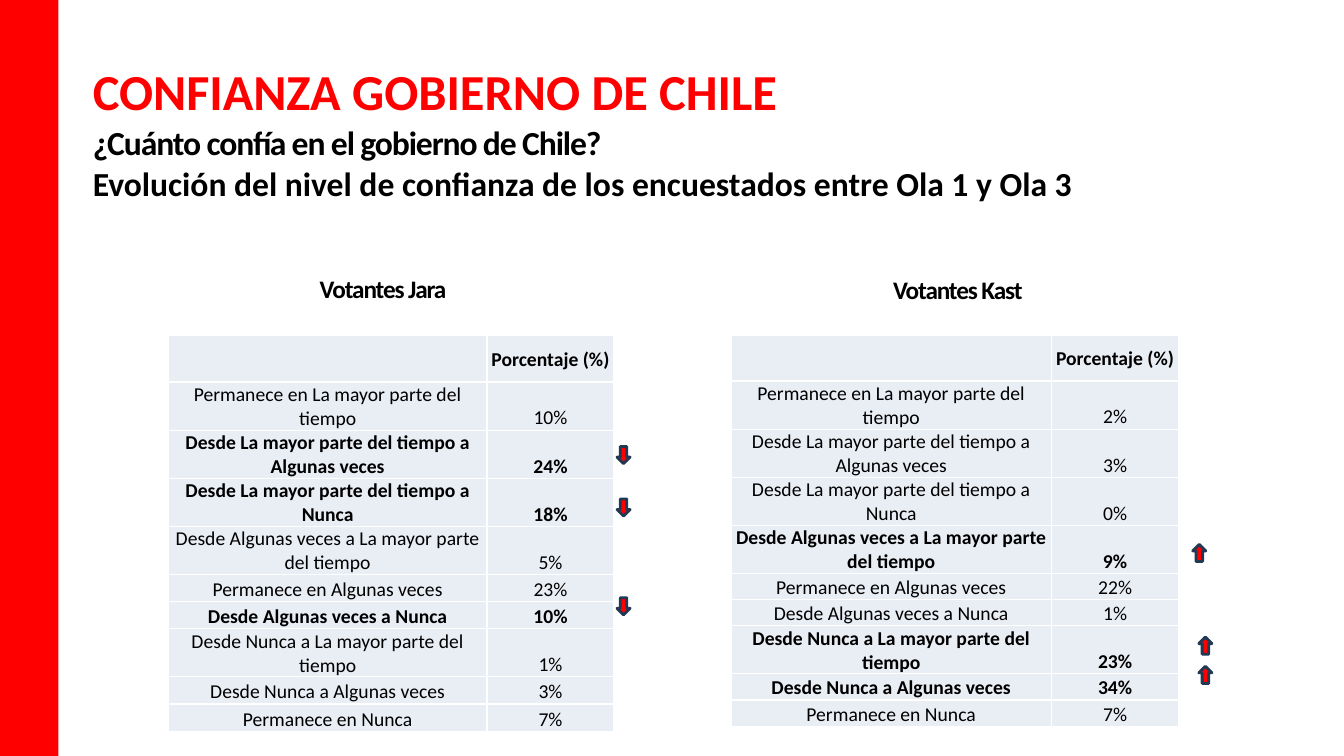
"""Build the slide on trust in the government of Chile."""
from dataclasses import dataclass

from lxml.etree import SubElement as Sub
from pptx import Presentation
from pptx.dml.color import RGBColor
from pptx.enum.shapes import MSO_SHAPE as Form
from pptx.enum.text import MSO_ANCHOR as Anchor, PP_ALIGN as Align
from pptx.oxml.ns import qn
from pptx.util import Inches, Pt

RED = RGBColor(0xFF, 0x00, 0x00)
BLACK = RGBColor(0x00, 0x00, 0x00)
WHITE = RGBColor(0xFF, 0xFF, 0xFF)
PALE = RGBColor(0xE9, 0xED, 0xF4)
NAVY = RGBColor(0x23, 0x39, 0x53)
FONT = "Calibri"
TIGHT = -0.8
EDGES = ("a:lnL", "a:lnR", "a:lnT", "a:lnB")

LABELS = (
    "Permanece en La mayor parte del tiempo",
    "Desde La mayor parte del tiempo a Algunas veces",
    "Desde La mayor parte del tiempo a Nunca",
    "Desde Algunas veces a La mayor parte del tiempo",
    "Permanece en Algunas veces",
    "Desde Algunas veces a Nunca",
    "Desde Nunca a La mayor parte del tiempo",
    "Desde Nunca a Algunas veces",
    "Permanece en Nunca",
)


@dataclass(frozen=True)
class Mark:
    row: int
    left: float
    top: float


@dataclass(frozen=True)
class Panel:
    name: str
    left: float
    width: float
    head: float
    row: float
    name_left: float
    name_top: float
    shares: tuple[int, ...]
    turn: int
    marks: tuple[Mark, ...]


PANELS = (
    Panel("Votantes Jara", 1.67, 3.16, 0.46, 0.27, 2.3, 2.66,
          (10, 24, 18, 5, 23, 10, 1, 3, 7), 0,
          (Mark(1, 6.12, 4.43), Mark(2, 6.12, 4.95), Mark(5, 6.12, 5.93))),
    Panel("Votantes Kast", 7.25, 3.18, 0.45, 0.26, 8, 2.67,
          (2, 3, 0, 9, 22, 1, 23, 34, 7), 180,
          (Mark(3, 11.83, 5.4), Mark(6, 11.89, 6.32), Mark(7, 11.89, 6.61))),
)


def add_run(para, text: str, size: float, color=BLACK, bold: bool = True,
            gap: float = 0) -> None:
    run = para.add_run()
    run.text = text
    font = run.font
    font.name, font.size, font.bold = FONT, Pt(size), bold
    font.color.rgb = color
    if gap:
        run._r.get_or_add_rPr().set("spc", str(round(gap * 100)))


def add_box(slide, left: float, top: float, width: float, height: float):
    box = slide.shapes.add_textbox(
        Inches(left), Inches(top), Inches(width), Inches(height))
    box.text_frame.word_wrap = True
    return box.text_frame


def add_form(slide, form, left: float, top: float, width: float, height: float):
    shape = slide.shapes.add_shape(
        form, Inches(left), Inches(top), Inches(width), Inches(height))
    shape.shadow.inherit = False
    shape.fill.solid()
    shape.fill.fore_color.rgb = RED
    return shape


def add_title(slide) -> None:
    frame = add_box(slide, 0.92, 0.58, 12.42, 2.29)
    frame.margin_left = frame.margin_right = frame.margin_bottom = 0
    frame.margin_top = Inches(0.02)
    add_run(frame.paragraphs[0], "CONFIANZA GOBIERNO DE CHILE", 36, RED)
    para = frame.add_paragraph()
    para.space_before = Pt(1)
    add_run(para, "¿Cuánto confía en el gobierno de Chile?", 24, gap=TIGHT)
    para.add_line_break()
    add_run(para, "Evolución del nivel de confianza de los encuestados "
                  "entre Ola 1 y Ola 3", 24)


def fill_cell(cell, text: str, bold: bool, anchor) -> None:
    cell.margin_left = cell.margin_right = cell.margin_top = Inches(0.01)
    cell.margin_bottom = 0
    cell.vertical_anchor = anchor
    props = cell._tc.get_or_add_tcPr()
    for edge in EDGES:
        line = Sub(props, qn(edge), w=str(Pt(1)))
        paint = Sub(line, qn("a:solidFill"))
        Sub(paint, qn("a:srgbClr"), val=str(WHITE))
    cell.fill.solid()
    cell.fill.fore_color.rgb = PALE
    para = cell.text_frame.paragraphs[0]
    para.alignment = Align.CENTER
    if text:
        add_run(para, text, 14, bold=bold)


def add_grid(slide, panel: Panel) -> None:
    bold_rows = {mark.row for mark in panel.marks}
    wide = 1.26
    tall = panel.head + panel.row * len(LABELS)
    grid = slide.shapes.add_table(
        len(LABELS) + 1, 2, Inches(panel.left), Inches(3.33),
        Inches(panel.width + wide), Inches(tall)).table
    grid.first_row = grid.horz_banding = False
    for col, width in zip(grid.columns, (panel.width, wide)):
        col.width = Inches(width)
    for row in grid.rows:
        row.height = Inches(panel.row)
    grid.rows[0].height = Inches(panel.head)
    for col, text in enumerate(("", "Porcentaje (%)")):
        fill_cell(grid.cell(0, col), text, True, Anchor.MIDDLE)
    for row, (label, share) in enumerate(zip(LABELS, panel.shares)):
        for col, text in enumerate((label, f"{share}%")):
            fill_cell(grid.cell(row + 1, col), text, row in bold_rows,
                      Anchor.BOTTOM)


def add_panel(slide, panel: Panel) -> None:
    add_grid(slide, panel)
    para = add_box(slide, panel.name_left, panel.name_top, 3, 0.4).paragraphs[0]
    para.alignment = Align.CENTER
    add_run(para, panel.name, 18, gap=TIGHT)
    for mark in panel.marks:
        arrow = add_form(slide, Form.DOWN_ARROW, mark.left, mark.top, 0.13, 0.17)
        arrow.rotation = panel.turn
        arrow.line.color.rgb = NAVY
        arrow.line.width = Pt(2)


def main() -> None:
    deck = Presentation()
    deck.slide_width, deck.slide_height = Inches(13.33), Inches(7.5)
    slide = deck.slides.add_slide(deck.slide_layouts[6])
    band = add_form(slide, Form.RECTANGLE, 0, 0, 0.58, 7.5)
    band.line.fill.background()
    add_title(slide)
    for panel in PANELS:
        add_panel(slide, panel)
    deck.save("out.pptx")


if __name__ == "__main__":
    main()
